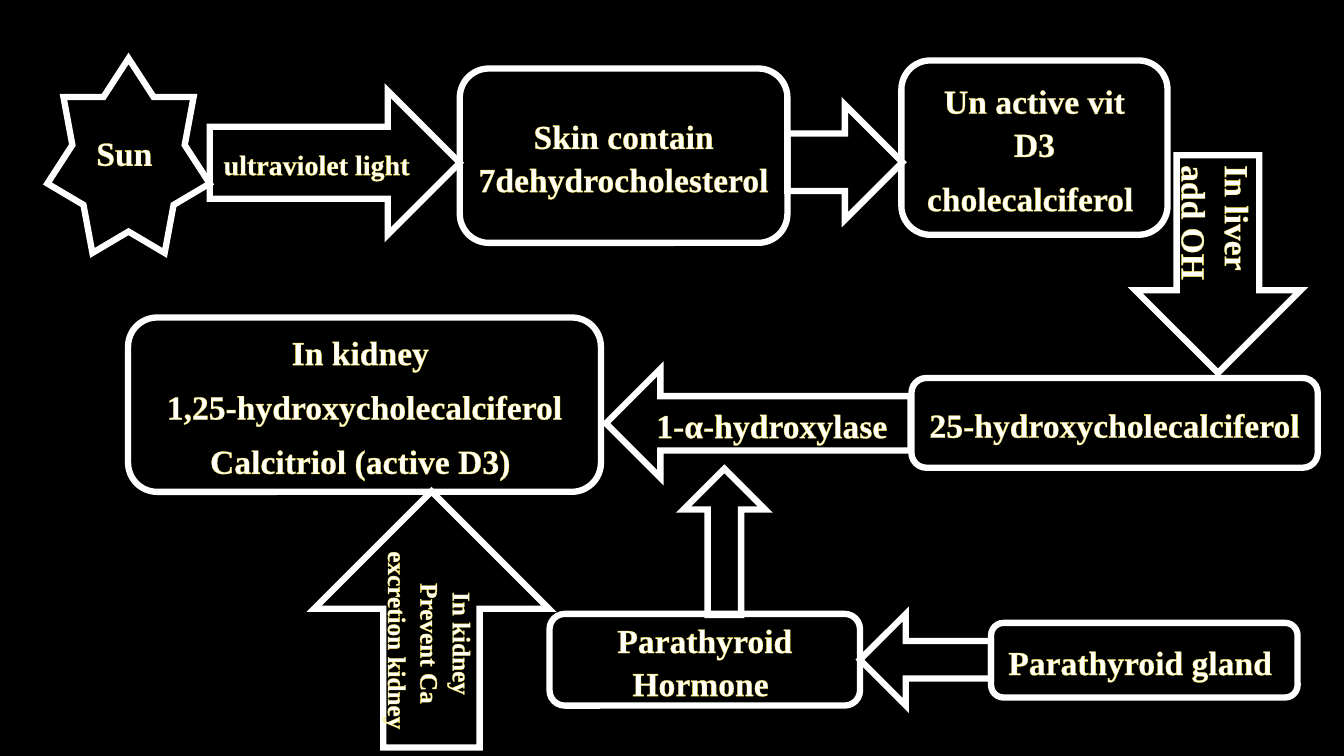
"""Builds a slide that charts the activation of vitamin D from sunlight to calcitriol."""
from dataclasses import dataclass

from lxml.etree import SubElement
from pptx import Presentation
from pptx.dml.color import RGBColor
from pptx.enum.shapes import MSO_SHAPE
from pptx.enum.text import MSO_ANCHOR, PP_ALIGN
from pptx.oxml.ns import qn
from pptx.shapes.autoshape import Shape
from pptx.slide import Slide
from pptx.text.text import _Run
from pptx.util import Inches, Pt

COLORS = {"background": "000000", "ink": "FFFFFF", "glow": "F4DE3A"}
CELL = Inches(0.1)
FONT_FORMAT = {"name": "Times New Roman", "bold": True}
PARAGRAPH_FORMAT = {"line_spacing": 1.07, "space_after": Pt(8)}
FRAME_FORMAT = {"word_wrap": True, "vertical_anchor": MSO_ANCHOR.MIDDLE}


@dataclass(frozen=True)
class Step:
    """One stage or arrow, placed in columns and rows of the grid."""
    column: float
    row: float
    columns: float
    rows: float
    lines: tuple[str, ...] = ()
    size: int = 24
    preset: MSO_SHAPE = MSO_SHAPE.ROUNDED_RECTANGLE
    align: PP_ALIGN = PP_ALIGN.CENTER


@dataclass(frozen=True)
class Arrow(Step):
    """A block arrow, optionally turned, mirrored or thinned."""
    preset: MSO_SHAPE = MSO_SHAPE.RIGHT_ARROW
    turn: int = 0
    mirrored: bool = False
    shaft: float = 0.5


PATHWAY = (
    Step(4.7, 5.8, 16.1, 19.3, ("Sun ",), preset=MSO_SHAPE.STAR_7_POINT),
    Arrow(20.8, 9, 24.8, 14.3, ("ultraviolet light",), 20),
    Step(45.6, 6.8, 32.5, 17.3, ("Skin contain 7dehydrocholesterol ",)),
    Arrow(78.1, 10.4, 11.4, 11.4),
    Step(89.4, 6, 26.4, 17.3, ("Un active vit D3", "cholecalciferol ")),
    Arrow(110, 18, 21.6, 16.4, ("In liver add OH",), align=PP_ALIGN.LEFT, turn=90),
    Step(90.4, 37.5, 40.3, 8.9, ("25-hydroxycholecalciferol",)),
    Arrow(60.1, 36.6, 30.2, 10.8, ("1-α-hydroxylase",), mirrored=True),
    Step(12.7, 31.5, 46.9, 17.3,
         ("In kidney ", "1,25-hydroxycholecalciferol", "Calcitriol (active D3) ")),
    Step(98.3, 61.8, 30.4, 7.4, ("Parathyroid gland ",)),
    Arrow(85.3, 60.9, 13, 9.1, mirrored=True, shaft=0.41),
    Step(54.5, 60.9, 30.8, 9.1, ("Parathyroid Hormone ",)),
    Arrow(30.1, 49.8, 25.4, 23.3, ("In kidney Prevent Ca excretion kidney ",), 18,
          turn=90, mirrored=True, shaft=0.41),
    Arrow(64.6, 49.7, 14.5, 8.1, turn=90, mirrored=True, shaft=0.41),
)


def apply_format(target: object, values: dict) -> None:
    for attribute, value in values.items():
        setattr(target, attribute, value)


def outline_letters(run: _Run) -> None:
    properties = run.font._element
    outline = SubElement(properties, qn("a:ln"), w=str(Pt(0.8)))
    fill = SubElement(outline, qn("a:solidFill"))
    SubElement(fill, qn("a:srgbClr"), val=COLORS["glow"])
    properties.insert(0, outline)


def write_lines(block: Shape, step: Step) -> None:
    frame = block.text_frame
    apply_format(frame, FRAME_FORMAT)
    for index, line in enumerate(step.lines):
        paragraph = frame.add_paragraph() if index else frame.paragraphs[0]
        apply_format(paragraph, PARAGRAPH_FORMAT | {"alignment": step.align})
        run = paragraph.add_run()
        run.text = line
        apply_format(run.font, FONT_FORMAT | {"size": Pt(step.size)})
        run.font.color.rgb = RGBColor.from_string(COLORS["ink"])
        outline_letters(run)


def draw_step(slide: Slide, step: Step) -> None:
    bounds = (round(cells * CELL)
              for cells in (step.column, step.row, step.columns, step.rows))
    block = slide.shapes.add_shape(step.preset, *bounds)
    block.shadow.inherit = False
    block.fill.background()
    block.line.color.rgb = RGBColor.from_string(COLORS["ink"])
    block.line.width = Pt(4.5)
    border = block._element.spPr.find(qn("a:ln"))
    SubElement(border, qn("a:miter"), lim="800000")
    if isinstance(step, Arrow):
        block.rotation = step.turn
        block.adjustments[0] = step.shaft
        if step.mirrored:
            block._element.spPr.find(qn("a:xfrm")).set("flipH", "1")
    write_lines(block, step)


def main() -> None:
    deck = Presentation()
    apply_format(deck, {"slide_width": Inches(13.33), "slide_height": Inches(7.5)})
    slide = deck.slides.add_slide(deck.slide_layouts[6])
    backdrop = slide.background.fill
    backdrop.solid()
    backdrop.fore_color.rgb = RGBColor.from_string(COLORS["background"])
    for step in PATHWAY:
        draw_step(slide, step)
    deck.save("out.pptx")


if __name__ == "__main__":
    main()
